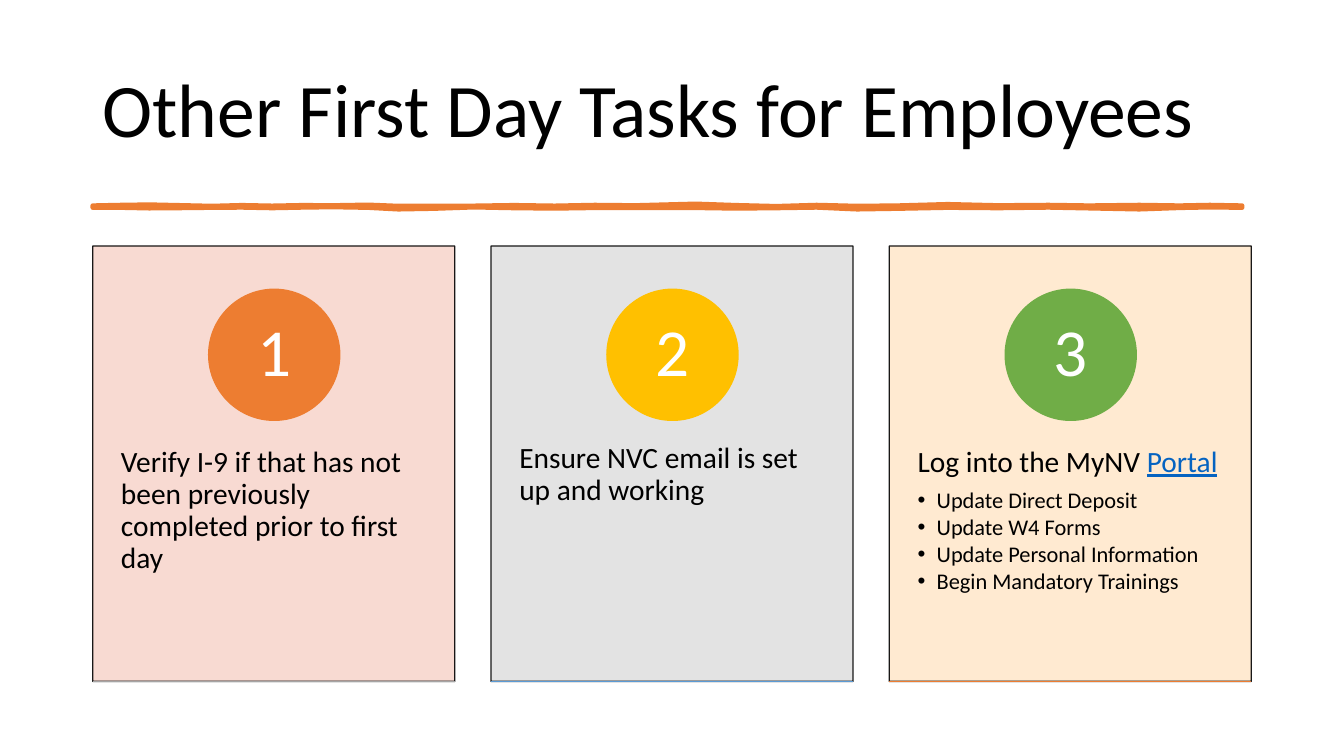
from pptx import Presentation
from pptx.dml.color import RGBColor
from pptx.enum.shapes import MSO_CONNECTOR, MSO_SHAPE
from pptx.enum.text import MSO_ANCHOR, PP_ALIGN
from pptx.oxml.ns import qn
from pptx.util import Pt
from lxml.etree import SubElement

PX = 9144
THEME = {
    "font": "Calibri",
    "ink": "000000",
    "white": "FFFFFF",
    "link": "0563C1",
    "accent": "ED7D31",
    "title": 54,
    "number": 48,
    "body": 21,
    "bullet": 16,
}


def add_text(left, top, width, height, paragraphs, margins, anchor=MSO_ANCHOR.TOP, align=PP_ALIGN.LEFT):
    box = page.shapes.add_textbox(left * PX, top * PX, width * PX, height * PX)
    frame = box.text_frame
    frame.word_wrap = True
    frame.vertical_anchor = anchor
    frame.margin_left = frame.margin_right = margins[0] * PX
    frame.margin_top = frame.margin_bottom = margins[1] * PX
    for index, (runs, size, after, bulleted) in enumerate(paragraphs):
        para = frame.paragraphs[0] if index == 0 else frame.add_paragraph()
        para.alignment = align
        para.line_spacing = 0.9
        para.space_after = Pt(after)
        if bulleted:
            para.level = 1
            properties = para._p.get_or_add_pPr()
            properties.set("marL", str(19 * PX))
            properties.set("indent", str(-19 * PX))
            SubElement(properties, qn("a:buFont")).set("typeface", "Arial")
            SubElement(properties, qn("a:buChar")).set("char", "•")
        for words, color in runs:
            span = para.add_run()
            span.text = words
            span.font.name = THEME["font"]
            span.font.size = Pt(size)
            span.font.color.rgb = RGBColor.from_string(color)
            span.font.underline = color == THEME["link"]


def paint(shape, fill, line, width=1, opacity=100):
    shape.shadow.inherit = False
    shape.fill.solid()
    shape.fill.fore_color.rgb = RGBColor.from_string(fill)
    shape.line.color.rgb = RGBColor.from_string(line)
    shape.line.width = Pt(width)
    if opacity < 100:
        for color in shape._element.spPr.iter(qn("a:srgbClr")):
            SubElement(color, qn("a:alpha")).set("val", str(opacity * 1000))


deck = Presentation()
deck.slide_width = 1333 * PX
deck.slide_height = 750 * PX
page = deck.slides.add_slide(deck.slide_layouts[6])

title = [([("Other First Day Tasks for Employees", THEME["ink"])], THEME["title"], 0, False)]
add_text(92, 40, 1150, 145, title, (10, 5), MSO_ANCHOR.MIDDLE)

BRUSH = [
    (920, 2040, 2060), (1200, 2034, 2060), (1480, 2030, 2066), (1750, 2036, 2064),
    (2100, 2044, 2060), (2400, 2036, 2058), (2700, 2042, 2064), (3000, 2036, 2058),
    (3300, 2038, 2054), (3650, 2032, 2060), (3950, 2044, 2076), (4300, 2044, 2070),
    (4700, 2042, 2056), (5100, 2036, 2064), (5500, 2042, 2068), (5900, 2034, 2062),
    (6300, 2038, 2062), (6900, 2022, 2062), (7300, 2036, 2068), (7700, 2046, 2064),
    (8100, 2034, 2058), (8500, 2044, 2076), (8900, 2040, 2070), (9400, 2026, 2060),
    (9900, 2038, 2064), (10400, 2034, 2058), (10800, 2040, 2066), (11300, 2034, 2076),
    (11700, 2040, 2062), (12000, 2034, 2056), (12320, 2040, 2060),
]
outline = [(x, top) for x, top, bottom in BRUSH]
outline += [(x, bottom) for x, top, bottom in reversed(BRUSH)]
builder = page.shapes.build_freeform(*outline[0], scale=PX / 10)
builder.add_line_segments(outline[1:], close=True)
rule = builder.convert_to_shape()
paint(rule, THEME["accent"], THEME["accent"], 3.25)
SubElement(rule.line._get_or_add_ln(), qn("a:round"))

CARDS = [
    ("F8D7CE", "ED7D31", "A5A5A5",
     [("Verify I-9 if that has not been previously completed prior to first day", THEME["ink"])], []),
    ("E1E1E1", "FFC000", "5B9BD5",
     [("Ensure NVC email is set up and working", THEME["ink"])], []),
    ("FFE8CC", "70AD47", "ED7D31",
     [("Log into the MyNV ", THEME["ink"]), ("Portal ", THEME["link"])],
     ["Update Direct Deposit", "Update W4 Forms", "Update Personal Information", "Begin Mandatory Trainings"]),
]
for index, (card_color, circle_color, base_color, task, steps) in enumerate(CARDS):
    left = 92 + 395 * index
    card = page.shapes.add_shape(MSO_SHAPE.RECTANGLE, left * PX, 244 * PX, 359 * PX, 432 * PX)
    paint(card, card_color, THEME["ink"], opacity=90)

    paragraphs = [(task, THEME["body"], 7, False)]
    paragraphs += [([(step, THEME["ink"])], THEME["bullet"], 2, True) for step in steps]
    add_text(left, 408, 359, 259, paragraphs, (28, 36))

    circle = page.shapes.add_shape(MSO_SHAPE.OVAL, (left + 115) * PX, 287 * PX, 130 * PX, 130 * PX)
    paint(circle, circle_color, circle_color)
    number = [([(str(index + 1), THEME["white"])], THEME["number"], 0, False)]
    add_text(left + 134, 306, 92, 92, number, (10, 1), MSO_ANCHOR.MIDDLE, PP_ALIGN.CENTER)

    base = page.shapes.add_connector(MSO_CONNECTOR.STRAIGHT, left * PX, 676 * PX, (left + 359) * PX, 676 * PX)
    base.line.color.rgb = RGBColor.from_string(base_color)
    base.line.width = Pt(1)
    SubElement(base._element.spPr, qn("a:effectLst"))

deck.save("out.pptx")
